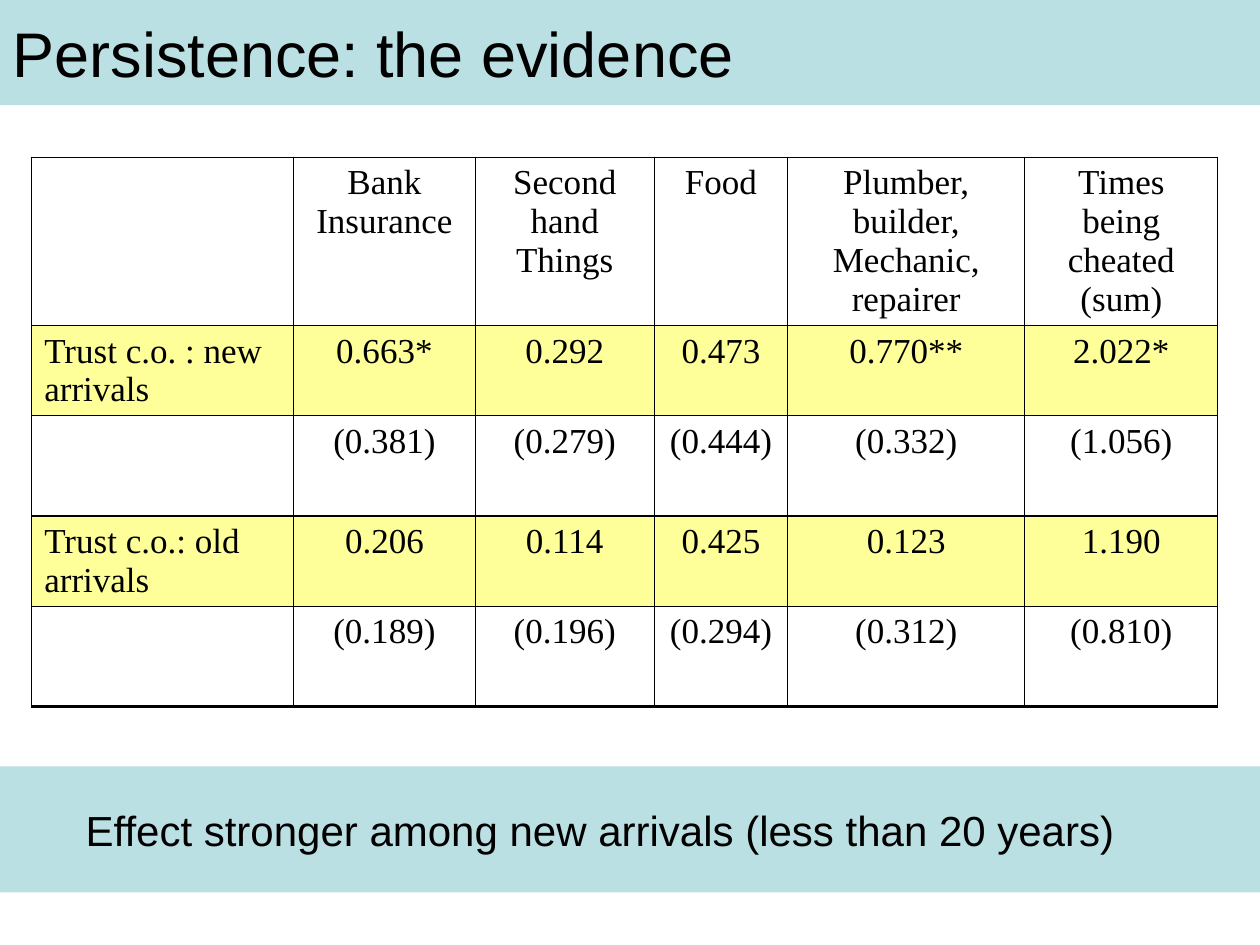
from dataclasses import dataclass

from lxml.etree import SubElement
from pptx import Presentation
from pptx.dml.color import RGBColor
from pptx.enum.shapes import MSO_SHAPE
from pptx.enum.text import MSO_ANCHOR, MSO_AUTO_SIZE, PP_ALIGN
from pptx.oxml.ns import qn
from pptx.util import Cm, Pt

BLACK = "000000"
BAND_BLUE = "BBE0E3"
HIGHLIGHT = "FFFF99"
SLIDE_WIDTH = 25.4
COLUMN_WIDTHS = [5.28, 3.66, 3.61, 2.69, 4.78, 3.89]


@dataclass
class TableRow:
    height: float
    texts: list[str]
    fill: str | None = None
    top_line: float = 0.75
    bottom_line: float = 0.75


ROWS = [
    TableRow(3.39, ["", "Bank\nInsurance", "Second hand\nThings", "Food",
                    "Plumber, builder,\nMechanic, repairer",
                    "Times being cheated (sum)"], bottom_line=1),
    TableRow(1.81, ["Trust c.o. : new arrivals", "0.663*", "0.292", "0.473",
                    "0.770**", "2.022*"], HIGHLIGHT, top_line=1),
    TableRow(2.02, ["", "(0.381)", "(0.279)", "(0.444)", "(0.332)", "(1.056)"]),
    TableRow(1.81, ["Trust c.o.: old arrivals", "0.206", "0.114", "0.425",
                    "0.123", "1.190"], HIGHLIGHT),
    TableRow(2.02, ["", "(0.189)", "(0.196)", "(0.294)", "(0.312)", "(0.810)"],
             bottom_line=2),
]


def set_fill(target, color: str) -> None:
    target.fill.solid()
    target.fill.fore_color.rgb = RGBColor.from_string(color)


def write_text(text_frame, text: str, font_name: str, size: float, alignment) -> None:
    text_frame.text = text
    text_frame.word_wrap = True
    for paragraph in text_frame.paragraphs:
        paragraph.alignment = alignment
        paragraph.font.name = font_name
        paragraph.font.size = Pt(size)
        paragraph.font.color.rgb = RGBColor.from_string(BLACK)


def format_band(shape, top: float, height: float, text: str, size: float, alignment) -> None:
    shape.left, shape.top = Cm(0), Cm(top)
    shape.width, shape.height = Cm(SLIDE_WIDTH), Cm(height)
    set_fill(shape, BAND_BLUE)
    shape.line.fill.background()
    write_text(shape.text_frame, text, "Arial", size, alignment)
    shape.text_frame.auto_size = MSO_AUTO_SIZE.NONE
    shape.text_frame.vertical_anchor = MSO_ANCHOR.MIDDLE


def set_borders(cell, top: float, bottom: float) -> None:
    properties = cell._tc.get_or_add_tcPr()
    for side, width in (("L", 0.75), ("R", 0.75), ("T", top), ("B", bottom)):
        line = SubElement(properties, qn(f"a:ln{side}"), w=str(Pt(width)))
        fill = SubElement(line, qn("a:solidFill"))
        SubElement(fill, qn("a:srgbClr"), val=BLACK)


def add_results_table(slide, left: float, top: float) -> None:
    frame = slide.shapes.add_table(
        len(ROWS), len(COLUMN_WIDTHS), Cm(left), Cm(top),
        Cm(sum(COLUMN_WIDTHS)), Cm(sum(row.height for row in ROWS)))
    table = frame.table
    table.first_row = table.horz_banding = False
    for column, width in zip(table.columns, COLUMN_WIDTHS):
        column.width = Cm(width)
    for row_index, row in enumerate(ROWS):
        table.rows[row_index].height = Cm(row.height)
        for column_index, text in enumerate(row.texts):
            cell = table.cell(row_index, column_index)
            alignment = PP_ALIGN.CENTER if column_index else PP_ALIGN.LEFT
            write_text(cell.text_frame, text, "Times New Roman", 20, alignment)
            set_borders(cell, row.top_line, row.bottom_line)
            if row.fill:
                set_fill(cell, row.fill)
            else:
                cell.fill.background()


def main() -> None:
    presentation = Presentation()
    presentation.slide_width, presentation.slide_height = Cm(SLIDE_WIDTH), Cm(19.05)
    slide = presentation.slides.add_slide(presentation.slide_layouts[5])
    format_band(slide.shapes.title, 0, 2.12, "Persistence: the evidence", 36, PP_ALIGN.LEFT)
    conclusion = slide.shapes.add_shape(MSO_SHAPE.RECTANGLE, 0, 0, 0, 0)
    conclusion.shadow.inherit = False
    format_band(conclusion, 15.45, 2.54,
                "Effect stronger among new arrivals (less than 20 years)", 24, PP_ALIGN.CENTER)
    conclusion.text_frame.margin_right = Cm(1.46)
    add_results_table(slide, 0.64, 3.17)
    presentation.save("out.pptx")


if __name__ == "__main__":
    main()
